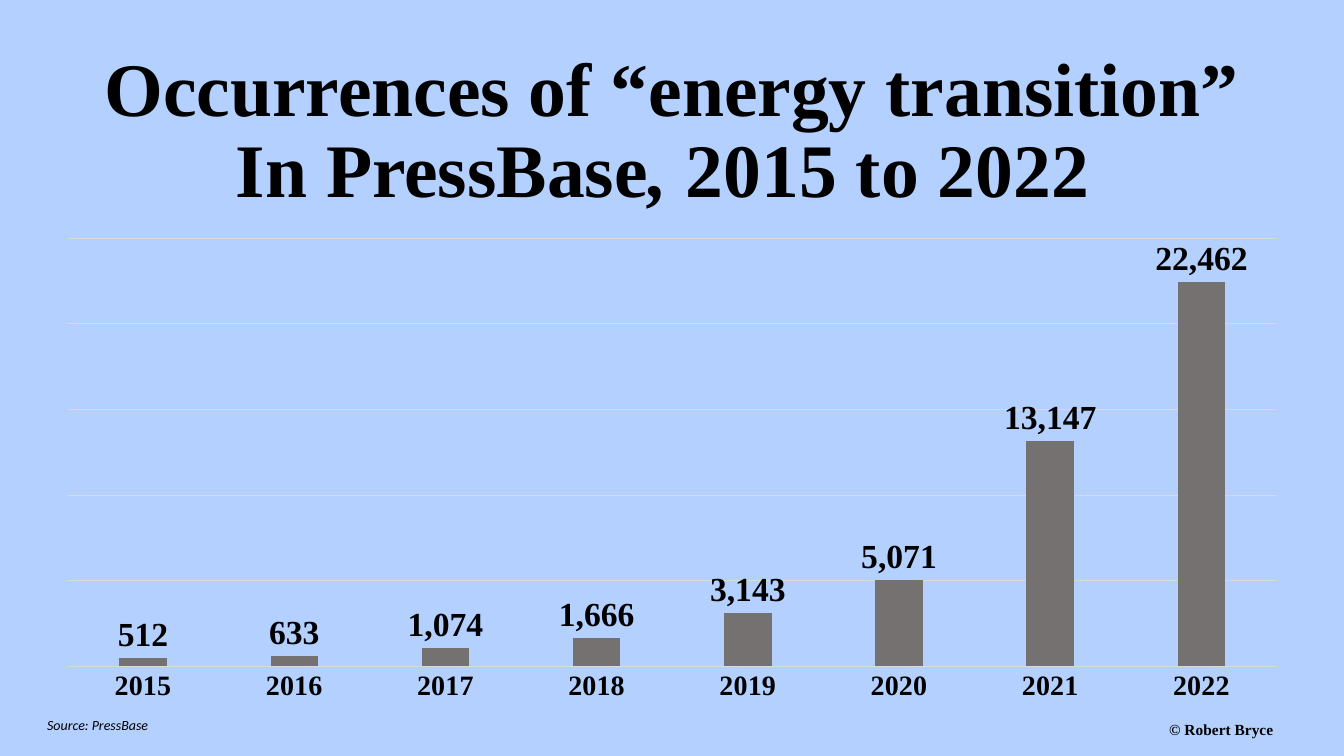
import pptx
import pptx.util
import pptx.chart.data
import pptx.dml.color
import pptx.enum.chart
import pptx.enum.text

Pt = pptx.util.Pt
SERIF = "Times New Roman"
SANS = "Calibri"
BLACK = "000000"
GRAY = "D9D9D9"
BAR = "767171"
BACK = "B4D0FF"


def color(code):
    return pptx.dml.color.RGBColor.from_string(code)


class Page:
    """Holds the slide and its text style."""

    def __init__(self, deck):
        self.slide = deck.slides.add_slide(deck.slide_layouts[5])
        fill = self.slide.background.fill
        fill.solid()
        fill.fore_color.rgb = color(BACK)

    def style(self, font, size, face=SERIF, bold=True, slant=False):
        font.name = face
        font.size = Pt(size)
        font.bold = bold
        font.italic = slant
        font.color.rgb = color(BLACK)

    def title(self, lines, left, top, width, height):
        shape = self.slide.shapes.title
        shape.left, shape.top = Pt(left), Pt(top)
        shape.width, shape.height = Pt(width), Pt(height)
        frame = shape.text_frame
        frame.word_wrap = True
        frame.auto_size = pptx.enum.text.MSO_AUTO_SIZE.NONE
        frame.vertical_anchor = pptx.enum.text.MSO_ANCHOR.MIDDLE
        para = frame.paragraphs[0]
        para.alignment = pptx.enum.text.PP_ALIGN.CENTER
        para.line_spacing = 0.9
        for row, line in enumerate(lines):
            if row:
                para.add_line_break()
            for text in line:
                run = para.add_run()
                run.text = text
                self.style(run.font, 54, slant=text == ", ")

    def note(self, text, left, top, width, height, size, wrap=True, **look):
        box = self.slide.shapes.add_textbox(
            Pt(left), Pt(top), Pt(width), Pt(height))
        frame = box.text_frame
        frame.word_wrap = wrap
        frame.text = text
        self.style(frame.paragraphs[0].runs[0].font, size, **look)

    def chart(self, counts, left, top, width, height):
        data = pptx.chart.data.CategoryChartData(number_format="#,##0")
        data.categories = list(counts)
        data.add_series("Series 1", list(counts.values()))
        chart = self.slide.shapes.add_chart(
            pptx.enum.chart.XL_CHART_TYPE.COLUMN_CLUSTERED,
            Pt(left), Pt(top), Pt(width), Pt(height), data).chart
        chart.has_title = False
        chart.has_legend = False
        self.style(chart.font, 10, SANS, bold=False)

        # Axes
        years = chart.category_axis
        years.major_tick_mark = pptx.enum.chart.XL_TICK_MARK.NONE
        self.style(years.tick_labels.font, 20)
        scale = chart.value_axis
        scale.visible = False
        scale.minimum_scale, scale.maximum_scale = 0, 25000
        scale.major_unit = 5000
        scale.has_major_gridlines = True
        for part in (years, scale.major_gridlines):
            part.format.line.color.rgb = color(GRAY)
            part.format.line.width = Pt(0.75)

        # Columns and their labels
        plot = chart.plots[0]
        plot.vary_by_categories = False
        plot.gap_width = 219
        plot.overlap = -27
        bars = plot.series[0]
        bars.format.fill.solid()
        bars.format.fill.fore_color.rgb = color(BAR)
        labels = bars.data_labels
        labels.show_value = True
        labels.number_format = "#,##0"
        labels.number_format_is_linked = False
        labels.position = pptx.enum.chart.XL_LABEL_POSITION.OUTSIDE_END
        self.style(labels.font, 24)


def main():
    deck = pptx.Presentation()
    deck.slide_width, deck.slide_height = Pt(960), Pt(540)
    page = Page(deck)

    # Heading
    page.title([["Occurrences of “energy transition”"],
                ["In PressBase", ", ", "2015 to 2022 "]],
               -4.3, 78.5, 968.4, 32.4)

    # Credits
    page.note("© Robert Bryce", 828, 510.5, 90, 24.5, 11)
    page.note("Source: PressBase", 26.6, 508.3, 90, 19.4, 10,
              wrap=False, face=SANS, bold=False, slant=True)

    # Yearly counts
    counts = {"2015": 512, "2016": 633, "2017": 1074, "2018": 1666,
              "2019": 3143, "2020": 5071, "2021": 13147, "2022": 22462}
    page.chart(counts, 30.2, 163.4, 900, 344.9)

    deck.save("out.pptx")


if __name__ == "__main__":
    main()
